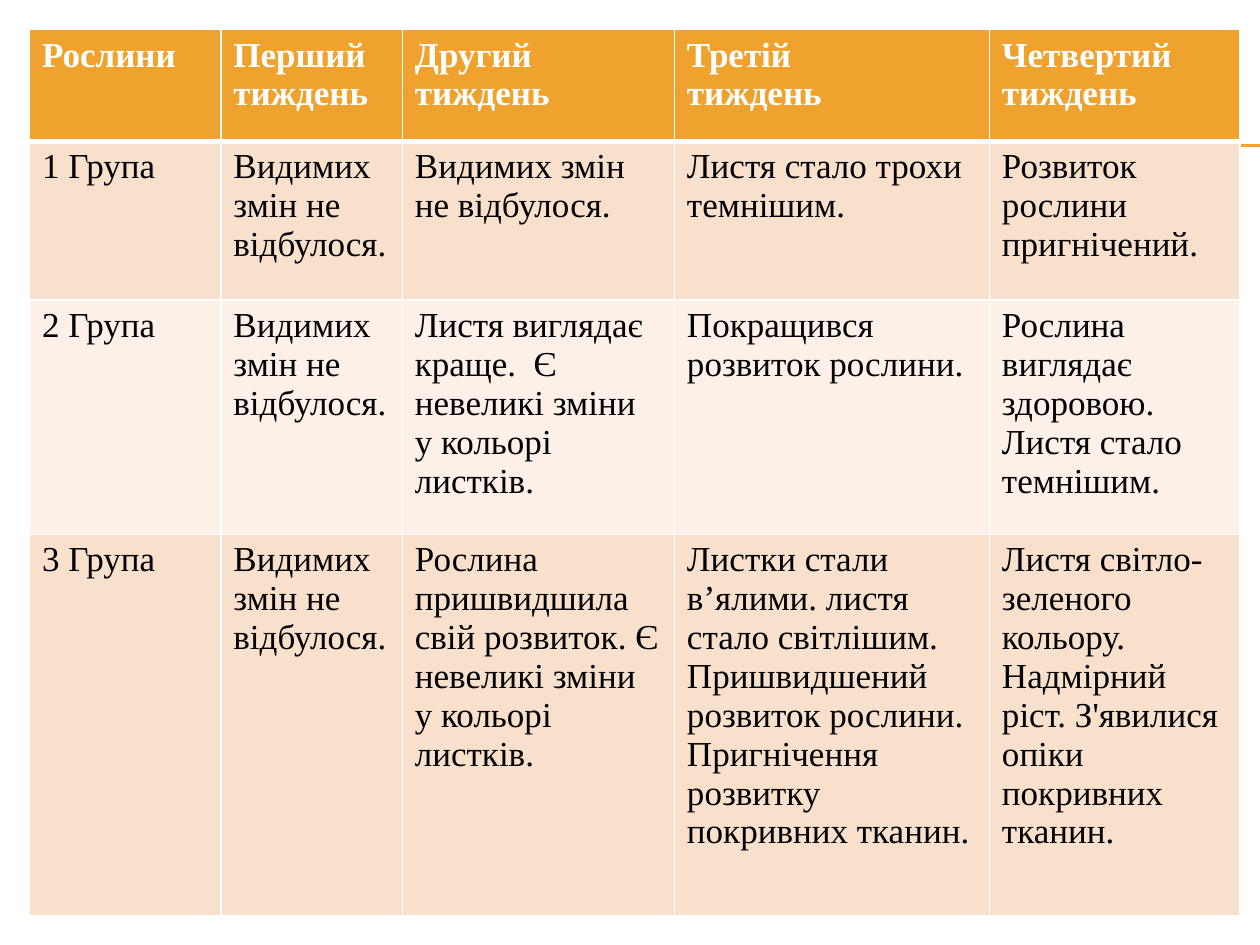
from lxml.etree import SubElement
from pptx import Presentation
from pptx.dml.color import RGBColor
from pptx.enum.shapes import MSO_CONNECTOR
from pptx.oxml.ns import qn
from pptx.util import Pt

HEADER = ["Рослини", "Перший\nтиждень", "Другий\nтиждень", "Третій\nтиждень", "Четвертий\nтиждень"]
NO_CHANGE = "Видимих змін не відбулося."
GROUPS = [
    ["1 Група", NO_CHANGE, NO_CHANGE, "Листя стало трохи темнішим.",
     "Розвиток рослини пригнічений."],
    ["2 Група", NO_CHANGE, "Листя виглядає краще.  Є невеликі зміни у кольорі листків.",
     "Покращився розвиток рослини.",
     "Рослина виглядає здоровою. Листя стало темнішим."],
    ["3 Група", NO_CHANGE,
     "Рослина пришвидшила свій розвиток. Є невеликі зміни у кольорі листків.",
     "Листки стали в’ялими. листя стало світлішим. Пришвидшений розвиток рослини. "
     "Пригнічення розвитку покривних тканин.",
     "Листя світло-зеленого кольору. Надмірний ріст. З'явилися опіки покривних тканин."],
]
COLUMN_WIDTHS = [109.4, 103.7, 155.5, 180, 143.3]
ROW_HEIGHTS = [64, 90.7, 133.9, 218.2]
TABLE_LEFT = TABLE_TOP = 16.8
RULE_LEFT, RULE_TOPS = 40.3, (82.8, 83.5)

ORANGE = RGBColor(0xF0, 0xA2, 0x2E)
PEACH = RGBColor(0xF9, 0xE0, 0xCD)
CREAM = RGBColor(0xFC, 0xF0, 0xE8)
WHITE = RGBColor(0xFF, 0xFF, 0xFF)
BLACK = RGBColor(0, 0, 0)


def add_borders(cell, bottom_width):
    """Draw white borders; call before the fill is set, as the schema wants lines first."""
    properties = cell._tc.get_or_add_tcPr()
    for side, width in (("L", 1), ("R", 1), ("T", 1), ("B", bottom_width)):
        border = SubElement(properties, qn(f"a:ln{side}"), w=str(Pt(width)))
        fill = SubElement(border, qn("a:solidFill"))
        SubElement(fill, qn("a:srgbClr"), val=str(WHITE))


def add_rule(slide, top, right):
    rule = slide.shapes.add_connector(
        MSO_CONNECTOR.STRAIGHT, Pt(RULE_LEFT), Pt(top), right, Pt(top))
    rule.line.color.rgb = ORANGE
    rule.line.width = Pt(0.75)
    SubElement(rule._element.spPr, qn("a:effectLst"))


def add_observations(slide):
    rows = [HEADER, *GROUPS]
    table = slide.shapes.add_table(
        len(rows), len(HEADER), Pt(TABLE_LEFT), Pt(TABLE_TOP),
        Pt(sum(COLUMN_WIDTHS)), Pt(sum(ROW_HEIGHTS))).table
    for column, width in zip(table.columns, COLUMN_WIDTHS):
        column.width = Pt(width)
    for r, (texts, height) in enumerate(zip(rows, ROW_HEIGHTS)):
        table.rows[r].height = Pt(height)
        is_header = r == 0
        background = ORANGE if is_header else (PEACH if r % 2 else CREAM)
        for c, text in enumerate(texts):
            cell = table.cell(r, c)
            add_borders(cell, 3 if is_header else 1)
            cell.fill.solid()
            cell.fill.fore_color.rgb = background
            cell.text = text
            for paragraph in cell.text_frame.paragraphs:
                font = paragraph.font
                font.name = "Times New Roman"
                font.size = Pt(20)
                font.bold = is_header
                font.color.rgb = WHITE if is_header else BLACK


def main():
    deck = Presentation()
    deck.slide_width, deck.slide_height = Pt(720), Pt(540)
    slide = deck.slides.add_slide(deck.slide_layouts[6])
    for top in RULE_TOPS:
        add_rule(slide, top, deck.slide_width)
    add_observations(slide)
    deck.save("out.pptx")


if __name__ == "__main__":
    main()
